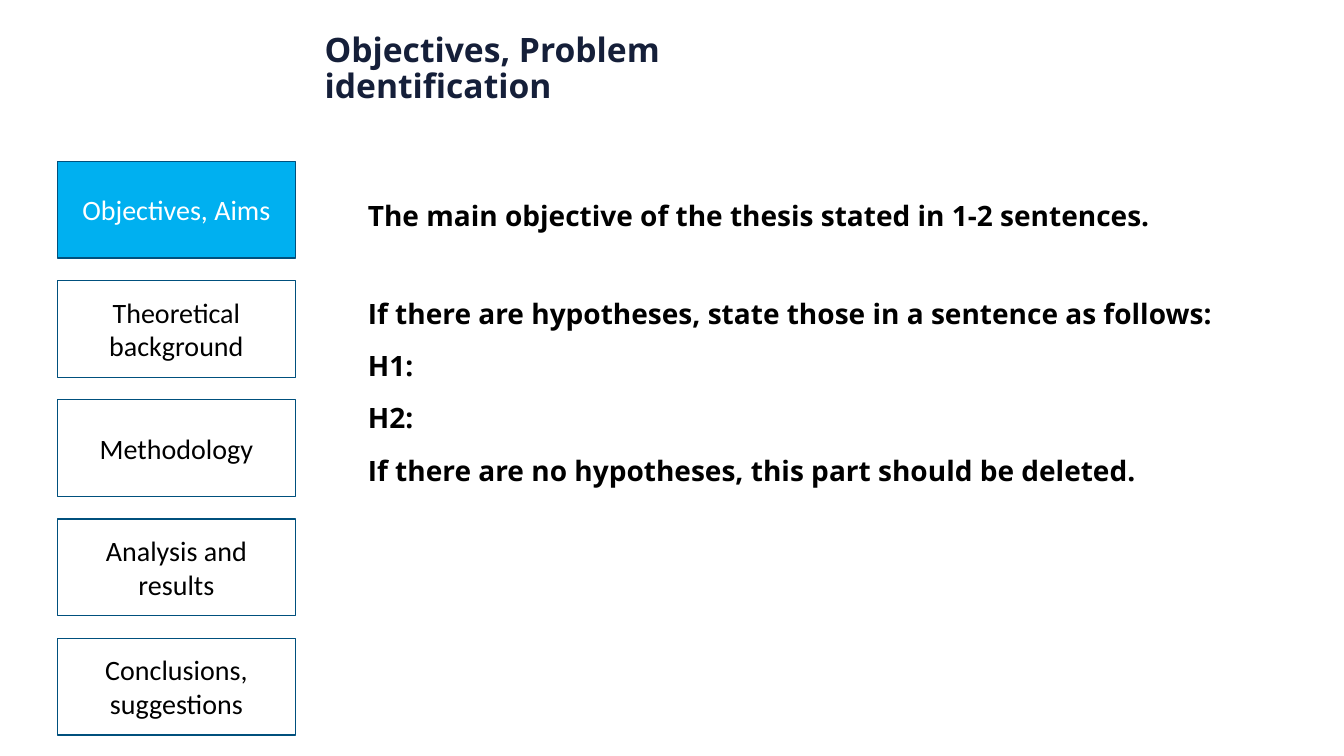
import pptx
import pptx.util
import pptx.dml.color
import pptx.enum.shapes
import pptx.enum.text

Inches = pptx.util.Inches
Pt = pptx.util.Pt
ALIGN = pptx.enum.text.PP_ALIGN
ANCHOR = pptx.enum.text.MSO_ANCHOR
COLORS = {"navy": "151F39", "black": "000000", "white": "FFFFFF",
          "active": "00B0F0", "border": "00507D"}


def rgb(name):
    return pptx.dml.color.RGBColor.from_string(COLORS[name])


def write(para, text, font, size, color, bold=False):
    run = para.add_run()
    run.text = text
    run.font.name = font
    run.font.size = Pt(size)
    run.font.bold = bold
    run.font.color.rgb = rgb(color)


deck = pptx.Presentation()
deck.slide_width = Inches(13.33)
deck.slide_height = Inches(7.5)
slide = deck.slides.add_slide(deck.slide_layouts[5])
slide.background.fill.solid()
slide.background.fill.fore_color.rgb = rgb("white")

# Title
title = slide.shapes.title
title.left, title.top = Inches(3.12), Inches(0.2)
title.width, title.height = Inches(5.64), Inches(0.9)
frame = title.text_frame
frame.word_wrap = True
frame.auto_size = pptx.enum.text.MSO_AUTO_SIZE.NONE
frame.vertical_anchor = ANCHOR.BOTTOM
para = frame.paragraphs[0]
para.alignment = ALIGN.LEFT
para.line_spacing = 0.9
write(para, "Objectives, Problem identification", "Open Sans", 24, "navy", True)

# Objective and hypotheses: text, line spacing, space before
lines = [
    ("The main objective of the thesis stated in 1-2 sentences.", 0.9, 0),
    ("If there are hypotheses, state those in a sentence as follows:", 1.14, 42),
    ("H1:", 1.14, 10),
    ("H2:", 1.14, 10),
    ("If there are no hypotheses, this part should be deleted.", 1.14, 10),
]
body = slide.shapes.add_textbox(Inches(3.55), Inches(1.96), Inches(8.83), Inches(4.03))
frame = body.text_frame
frame.word_wrap = True
for i, (text, spacing, before) in enumerate(lines):
    para = frame.add_paragraph() if i else frame.paragraphs[0]
    para.alignment = ALIGN.JUSTIFY
    para.line_spacing = spacing
    para.space_before = Pt(before)
    write(para, text, "Open Sans", 20, "black", True)

# Section menu with the current section highlighted
steps = ["Objectives, Aims", "Theoretical background", "Methodology",
         "Analysis and results", "Conclusions, suggestions"]
current = 0
for i, step in enumerate(steps):
    box = slide.shapes.add_shape(
        pptx.enum.shapes.MSO_SHAPE.ROUNDED_RECTANGLE,
        Inches(0.57), Inches(1.6 + 1.183 * i), Inches(2.36), Inches(0.96))
    box.adjustments[0] = 0
    box.shadow.inherit = False
    box.fill.solid()
    box.fill.fore_color.rgb = rgb("active" if i == current else "white")
    box.line.color.rgb = rgb("border")
    box.line.width = Pt(1)
    frame = box.text_frame
    frame.word_wrap = True
    frame.vertical_anchor = ANCHOR.MIDDLE
    para = frame.paragraphs[0]
    para.alignment = ALIGN.CENTER
    write(para, step, "Calibri", 20, "white" if i == current else "black")

deck.save("out.pptx")
